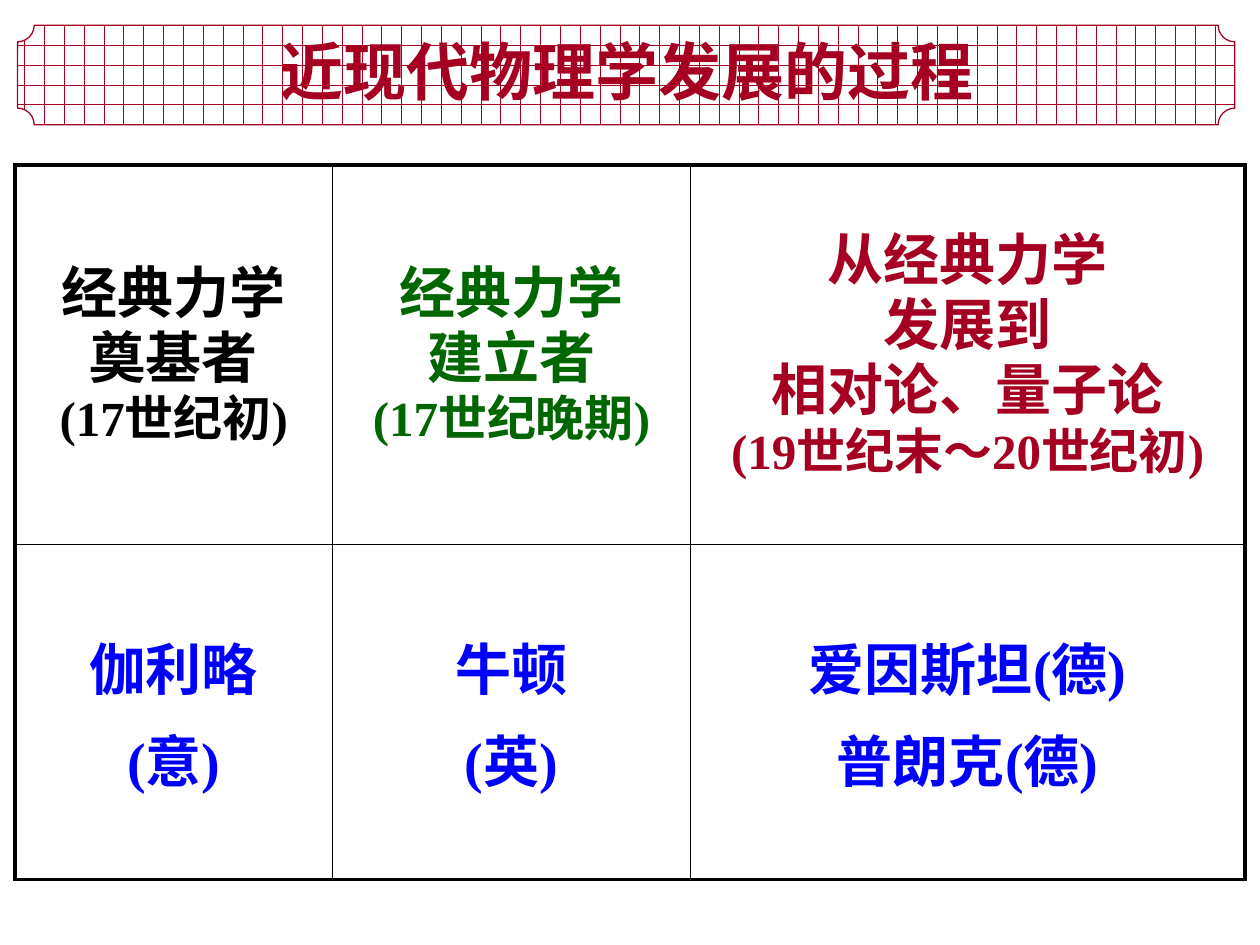
from lxml import etree
from pptx import Presentation
from pptx import util as u
from pptx.dml.color import RGBColor
from pptx.enum import dml, shapes, text
from pptx.oxml.ns import qn

BLACK = RGBColor(0, 0, 0)
WHITE = RGBColor(255, 255, 255)
GREEN = RGBColor(0, 0x66, 0)
CRIMSON = RGBColor(0xA5, 0, 0x21)
BLUE = RGBColor(0, 0, 255)

# Content: one (era colour, era lines, physicists) per column
TITLE = "近现代物理学发展的过程"
COLUMNS = [
    (BLACK, ["经典力学", "奠基者", "(17世纪初)"], ["伽利略", "(意)"]),
    (GREEN, ["经典力学", "建立者", "(17世纪晚期)"], ["牛顿", "(英)"]),
    (CRIMSON, ["从经典力学", "发展到", "相对论、量子论", "(19世纪末～20世纪初)"],
     ["爱因斯坦(德)", "普朗克(德)"]),
]
COL_WIDTHS = [2.52, 2.84, 4.4]
ROW_HEIGHTS = [3.01, 2.66]
THICK, THIN = u.Pt(2.25), u.Pt(1)


def box(*lengths):
    return [u.Inches(n) for n in lengths]


def write(tf, lines, sizes, color, font="Times New Roman", spacing=None, before=None):
    for i, (line, size) in enumerate(zip(lines, sizes)):
        p = tf.paragraphs[0] if i == 0 else tf.add_paragraph()
        p.alignment = text.PP_ALIGN.CENTER
        p.line_spacing, p.space_before = spacing, before
        r = p.add_run()
        r.text = line
        r.font.name, r.font.size, r.font.bold = font, u.Pt(size), True
        r.font.color.rgb = color


def set_borders(cell, **widths):
    tcPr = cell._tc.get_or_add_tcPr()
    for side, width in widths.items():
        ln = etree.SubElement(tcPr, qn("a:ln" + side), w=str(int(width)))
        fill = etree.SubElement(ln, qn("a:solidFill"))
        etree.SubElement(fill, qn("a:srgbClr"), val=str(BLACK))


prs = Presentation()
prs.slide_width, prs.slide_height = box(10, 7.5)
s = prs.slides.add_slide(prs.slide_layouts[5])

# Table: eras above, physicists below
n_rows, n_cols = len(ROW_HEIGHTS), len(COL_WIDTHS)
table = s.shapes.add_table(
    n_rows, n_cols, *box(0.12, 1.31, sum(COL_WIDTHS), sum(ROW_HEIGHTS))).table
table.first_row = table.horz_banding = False
for row, height in zip(table.rows, ROW_HEIGHTS):
    row.height = u.Inches(height)
for c, (color, era, people) in enumerate(COLUMNS):
    table.columns[c].width = u.Inches(COL_WIDTHS[c])
    era_sizes = [32] * (len(era) - 1) + [28]
    write(table.cell(0, c).text_frame, era, era_sizes, color, spacing=0.8)
    write(table.cell(1, c).text_frame, people, [32] * len(people), BLUE,
          before=u.Pt(6.4))
    for r in range(n_rows):
        cell = table.cell(r, c)
        cell.vertical_anchor = text.MSO_ANCHOR.MIDDLE
        set_borders(cell,
                    L=THICK if c == 0 else THIN,
                    R=THICK if c == n_cols - 1 else THIN,
                    T=THICK if r == 0 else THIN,
                    B=THICK if r == n_rows - 1 else THIN)
        cell.fill.background()

# Plaque behind the title
plaque = s.shapes.add_shape(shapes.MSO_SHAPE.PLAQUE, *box(0.14, 0.2, 9.66, 0.79))
plaque.shadow.inherit = False
plaque.fill.patterned()
plaque.fill.pattern = dml.MSO_PATTERN.DOTTED_GRID
plaque.fill.fore_color.rgb, plaque.fill.back_color.rgb = CRIMSON, WHITE
plaque.line.color.rgb, plaque.line.width = CRIMSON, u.Pt(0.75)

# Title, brought in front of the plaque
title = s.shapes.title
title.left, title.top, title.width, title.height = box(0.04, 0.21, 9.88, 0.7)
tf = title.text_frame
tf.word_wrap = True
tf.auto_size = text.MSO_AUTO_SIZE.NONE
tf.vertical_anchor = text.MSO_ANCHOR.TOP
write(tf, [TITLE], [36], CRIMSON, font="Arial")
plaque._element.addnext(title._element)

prs.save("out.pptx")
